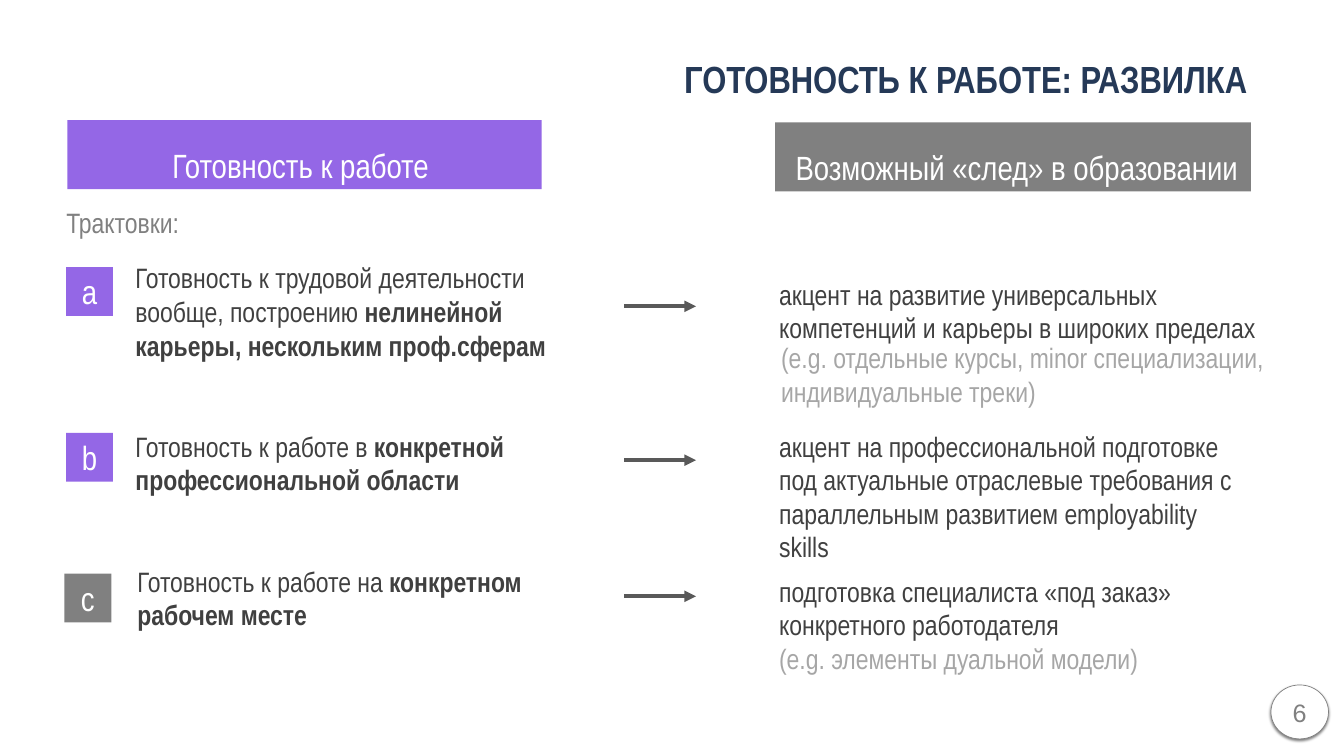
from dataclasses import dataclass

from lxml.etree import SubElement
from pptx import Presentation
from pptx.dml.color import RGBColor
from pptx.enum.shapes import MSO_CONNECTOR, MSO_SHAPE
from pptx.enum.text import MSO_ANCHOR, MSO_AUTO_SIZE, PP_ALIGN
from pptx.oxml.ns import qn
from pptx.util import Cm, Pt


@dataclass(frozen=True)
class Theme:
    navy: str = "253957"
    violet: str = "9467E6"
    gray: str = "808080"
    dark: str = "404040"
    pale: str = "A6A6A6"
    line: str = "595959"
    white: str = "FFFFFF"
    face: str = "Arial Narrow"
    plain: str = "Arial"
    title: int = 54
    head: int = 48
    body: int = 40
    page: int = 36


@dataclass(frozen=True)
class Box:
    left: float
    top: float
    width: float
    height: float

    def place(self) -> tuple:
        return Cm(self.left), Cm(self.top), Cm(self.width), Cm(self.height)


@dataclass(frozen=True)
class Part:
    text: str
    bold: bool = False
    color: str = Theme.dark


@dataclass(frozen=True)
class Row:
    mark: str
    fill: str
    badge: Box
    claim: Box
    trace: Box
    level: float
    left: tuple[Part, ...]
    right: tuple[Part, ...]


THEME = Theme()
ARROW = (31.47, 35.08)
TRACE = 39.07

ROWS = (
    Row("a", THEME.violet, Box(3.33, 13.46, 2.36, 2.46),
        Box(6.63, 12.7, 23.24, 5.97), Box(TRACE, 13.54, 25.2, 4.24), 15.44,
        (Part("Готовность к трудовой деятельности вообще, построению "),
         Part("нелинейной карьеры, нескольким проф.сферам", True)),
        (Part("акцент на развитие универсальных компетенций и карьеры в широких пределах"),)),
    Row("b", THEME.violet, Box(3.33, 21.82, 2.36, 2.46),
        Box(6.63, 21.21, 25.43, 4.24), Box(TRACE, 21.18, 24.03, 7.67), 23.19,
        (Part("Готовность к работе в "),
         Part("конкретной профессиональной области", True)),
        (Part("акцент на профессиональной подготовке под актуальные отраслевые "
              "требования с параллельным развитием employability skills"),)),
    Row("c", THEME.gray, Box(3.25, 28.91, 2.36, 2.46),
        Box(6.73, 28.22, 20.73, 3.81), Box(TRACE, 28.5, 23.98, 5.97), 30.05,
        (Part("Готовность к работе на "),
         Part("конкретном рабочем месте", True)),
        (Part("подготовка специалиста «под заказ» конкретного работодателя \n"),
         Part("(e.g. элементы дуальной модели)", color=THEME.pale))),
)


def tune(frame, inset: float = 0.2, wrap: bool = True, anchor=MSO_ANCHOR.MIDDLE) -> None:
    frame.word_wrap = wrap
    frame.auto_size = MSO_AUTO_SIZE.NONE
    frame.vertical_anchor = anchor
    frame.margin_left = frame.margin_right = Cm(inset)
    frame.margin_top = frame.margin_bottom = Cm(inset)


def write(frame, text: str, *, size: int = THEME.body, color: str = THEME.dark,
          bold: bool = False, face: str = THEME.face, align=PP_ALIGN.LEFT,
          space: float = 1.0, fresh: bool = False) -> None:
    para = frame.add_paragraph() if fresh else frame.paragraphs[-1]
    para.alignment = align
    para.line_spacing = space
    for index, piece in enumerate(text.split("\n")):
        if index:
            para.add_line_break()
        if piece:
            run = para.add_run()
            run.text = piece
            font = run.font
            font.size, font.bold, font.name = Pt(size), bold, face
            font.color.rgb = RGBColor.from_string(color)


def block(slide, box: Box, fill: str, form=MSO_SHAPE.RECTANGLE):
    shape = slide.shapes.add_shape(form, *box.place())
    shape.shadow.inherit = False
    shape.fill.solid()
    shape.fill.fore_color.rgb = RGBColor.from_string(fill)
    shape.line.fill.background()
    tune(shape.text_frame)
    return shape


def label(slide, box: Box, text: str, fill: str, space: float = 1.0) -> None:
    shape = block(slide, box, fill)
    write(shape.text_frame, text, size=THEME.head, color=THEME.white,
          align=PP_ALIGN.CENTER, space=space)


def prose(slide, box: Box, parts: tuple[Part, ...]) -> None:
    frame = slide.shapes.add_textbox(*box.place()).text_frame
    tune(frame)
    for part in parts:
        write(frame, part.text, bold=part.bold, color=part.color)


def note(slide, box: Box, lines: tuple[str, ...], color: str) -> None:
    frame = slide.shapes.add_textbox(*box.place()).text_frame
    tune(frame, inset=0.25, wrap=False, anchor=MSO_ANCHOR.TOP)
    frame.margin_top = frame.margin_bottom = Cm(0.13)
    for index, line in enumerate(lines):
        write(frame, line, color=color, fresh=index > 0)


def arrow(slide, level: float) -> None:
    start, end = ARROW
    link = slide.shapes.add_connector(
        MSO_CONNECTOR.STRAIGHT, Cm(start), Cm(level), Cm(end), Cm(level))
    link.line.width = Pt(5.5)
    link.line.color.rgb = RGBColor.from_string(THEME.line)
    SubElement(link.line._get_or_add_ln(), qn("a:tailEnd"), type="triangle")
    SubElement(link._element.spPr, qn("a:effectLst"))


def badge(slide, box: Box, text: str) -> None:
    shape = block(slide, box, THEME.white, MSO_SHAPE.OVAL)
    shape.line.color.rgb = RGBColor.from_string(THEME.gray)
    shape.line.width = Pt(1)
    glow = shape._element.spPr.find(qn("a:effectLst"))
    shade = SubElement(glow, qn("a:outerShdw"), blurRad=str(Pt(4)),
                       dist=str(Pt(2)), dir="5400000", rotWithShape="0")
    tint = SubElement(shade, qn("a:srgbClr"), val="000000")
    SubElement(tint, qn("a:alpha"), val="50000")
    write(shape.text_frame, text, size=THEME.page, color=THEME.gray,
          face=THEME.plain, align=PP_ALIGN.CENTER)


def main() -> None:
    deck = Presentation()
    deck.slide_width, deck.slide_height = Cm(67.74), Cm(38.1)
    slide = deck.slides.add_slide(deck.slide_layouts[5])

    title = slide.shapes.title
    title.left, title.top, title.width, title.height = Box(3.4, 2.34, 59.69, 3.2).place()
    tune(title.text_frame)
    write(title.text_frame, "ГОТОВНОСТЬ К РАБОТЕ: РАЗВИЛКА", size=THEME.title,
          color=THEME.navy, bold=True, align=PP_ALIGN.RIGHT)

    label(slide, Box(3.4, 6.05, 23.9, 3.48), "Готовность к работе ", THEME.violet, 1.5)
    label(slide, Box(TRACE, 6.17, 23.98, 3.48), " Возможный «след» в образовании",
          THEME.gray, 1.5)
    note(slide, Box(3.1, 10.21, 6.32, 1.96), ("Трактовки:",), THEME.gray)

    for row in ROWS:
        label(slide, row.badge, row.mark, row.fill)
        prose(slide, row.claim, row.left)
        arrow(slide, row.level)
        prose(slide, row.trace, row.right)

    note(slide, Box(39.12, 17.04, 25.55, 3.68),
         ("(e.g. отдельные курсы, minor специализации,", "индивидуальные треки)"),
         THEME.pale)
    badge(slide, Box(64.06, 34.52, 2.9, 2.72), "6")
    deck.save("out.pptx")


if __name__ == "__main__":
    main()
